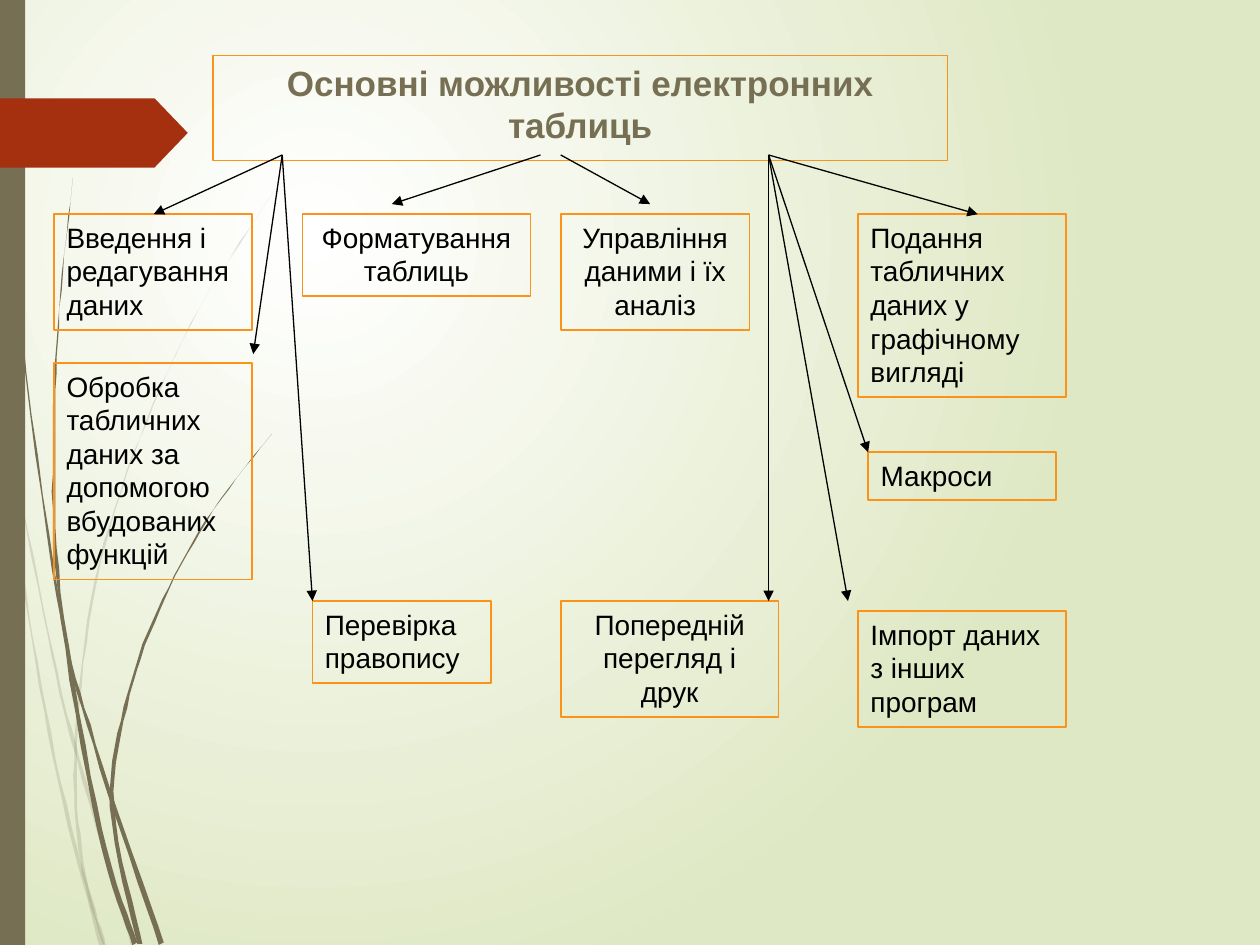
import math
from lxml import etree
from pptx import Presentation, util as u
from pptx.dml.color import RGBColor
from pptx.enum import shapes, text
from pptx.oxml.ns import qn

PX = 9144
SLIDE_W, SLIDE_H = 1000, 750
OLIVE = RGBColor(0x76, 0x6F, 0x54)
RUST = RGBColor(0xA5, 0x30, 0x10)
ORANGE = RGBColor(0xFB, 0x93, 0x18)
BLACK = RGBColor(0, 0, 0)
WHITE = RGBColor(0xFF, 0xFF, 0xFF)
PALE_GREEN = RGBColor(0xDF, 0xE8, 0xC4)
LEFT, CENTER = text.PP_ALIGN.LEFT, text.PP_ALIGN.CENTER

TITLE = "Основні можливості електронних таблиць"
FEATURES = [
    ("Введення і редагування даних", LEFT, 43, 170, 157, 92),
    ("Обробка табличних даних за допомогою вбудованих функцій", LEFT, 43, 288, 157, 172),
    ("Форматування таблиць", CENTER, 240, 170, 181, 65),
    ("Управління даними і їх аналіз", CENTER, 445, 170, 150, 92),
    ("Перевірка правопису", LEFT, 248, 477, 142, 65),
    ("Попередній перегляд і друк", CENTER, 445, 477, 173, 92),
    ("Подання табличних даних у графічному вигляді", LEFT, 681, 170, 165, 145),
    ("Макроси", LEFT, 689, 359, 149, 38),
    ("Імпорт даних з інших програм", LEFT, 681, 485, 165, 92),
]
ARROW_TOP = 123
ARROWS = {
    224: [(201, 281), (122, 170), (248, 477)],
    610: [(673, 477), (776, 170), (689, 359), (610, 477)],
    429: [(311, 162)],
    445: [(516, 162)],
}
FAINT, SOLID = 20, 100
WISPS = [
    (FAINT, 4, [(0, 290), (11, 365), (42, 521), (62, 602), (106, 750)]),
    (FAINT, 4, [(8, 350), (20, 470), (47, 620), (81, 750)]),
    (FAINT, 3, [(217, 153), (158, 245), (111, 348), (76, 461), (60, 590), (65, 683), (83, 750)]),
    (SOLID, 4, [(2, 0), (14, 233), (46, 475), (75, 591), (128, 749)]),
    (SOLID, 5, [(58, 141), (47, 245), (43, 349), (47, 470), (79, 658), (107, 749)]),
    (SOLID, 4, [(216, 344), (169, 405), (130, 475), (102, 551), (89, 640), (111, 749)]),
]


def px(*lengths):
    return [u.Emu(n * PX) for n in lengths]


def smooth(knots, steps=8):
    padded = [knots[0], *knots, knots[-1]]
    for a, b, c, d in zip(padded, padded[1:], padded[2:], padded[3:]):
        for step in range(steps):
            t = step / steps
            yield tuple(q + t * (r - p) / 2 + t * t * (2 * p - 5 * q + 4 * r - s) / 2
                        + t ** 3 * (3 * q - p - 3 * r + s) / 2
                        for p, q, r, s in zip(a, b, c, d))
    yield knots[-1]


def ribbon(knots, width):
    spine = list(smooth(knots))
    last = len(spine) - 1
    near, far = [], []
    for i, (x, y) in enumerate(spine):
        before, after = spine[max(i - 1, 0)], spine[min(i + 1, last)]
        dx, dy = after[0] - before[0], after[1] - before[1]
        reach = width * i / last / 2 / math.hypot(dx, dy)
        near.append((x - dy * reach, y + dx * reach))
        far.append((x + dy * reach, y - dx * reach))
    return near + far[::-1]


def paint(part, color, opacity=SOLID):
    part.shadow.inherit = False
    part.fill.solid()
    part.fill.fore_color.rgb = color
    part.line.fill.background()
    if opacity < SOLID:
        tint = part._element.spPr.find(".//" + qn("a:srgbClr"))
        etree.SubElement(tint, qn("a:alpha"), val=str(opacity * 1000))


def frame(box, words, align, size, color, bold=False):
    box.fill.background()
    box.line.color.rgb = ORANGE
    box.line.width = u.Pt(1)
    body = box.text_frame
    body.word_wrap = True
    body.auto_size = text.MSO_AUTO_SIZE.SHAPE_TO_FIT_TEXT
    body.vertical_anchor = text.MSO_ANCHOR.TOP
    paragraph = body.paragraphs[0]
    paragraph.alignment = align
    run = paragraph.add_run()
    run.text = words
    run.font.name, run.font.size, run.font.bold = "Arial", u.Pt(size), bold
    run.font.color.rgb = color


deck = Presentation()
deck.slide_width, deck.slide_height = px(SLIDE_W, SLIDE_H)
slide = deck.slides.add_slide(deck.slide_layouts[5])
parts = slide.shapes

backdrop = slide.background.fill
backdrop.gradient()
for stop, color in zip(backdrop.gradient_stops, (WHITE, PALE_GREEN)):
    stop.color.rgb = color
linear = slide.element.find(".//" + qn("a:lin"))
radial = etree.Element(qn("a:path"), path="circle")
etree.SubElement(radial, qn("a:fillToRect"), l="50000", t="50000", r="100000", b="100000")
linear.getparent().replace(linear, radial)

for opacity, width, knots in WISPS:
    start, *outline = ribbon(knots, width)
    builder = parts.build_freeform(*start, scale=PX)
    builder.add_line_segments(outline, close=True)
    paint(builder.convert_to_shape(), OLIVE, opacity)

paint(parts.add_shape(shapes.MSO_SHAPE.RECTANGLE, *px(0, 0, 20, SLIDE_H)), OLIVE)
pointer = parts.add_shape(shapes.MSO_SHAPE.PENTAGON, *px(0, 78, 149, 55))
pointer.adjustments[0] = 0.48
paint(pointer, RUST)

heading = parts.title
heading.left, heading.top, heading.width, heading.height = px(169, 44, 583, 78)
frame(heading, TITLE, CENTER, 20, OLIVE, bold=True)

for words, align, *place in FEATURES:
    feature = parts.add_shape(shapes.MSO_SHAPE.RECTANGLE, *px(*place))
    feature.shadow.inherit = False
    frame(feature, words, align, 16, BLACK)

for start, targets in ARROWS.items():
    for target in targets:
        arrow = parts.add_connector(shapes.MSO_CONNECTOR.STRAIGHT, *px(start, ARROW_TOP, *target))
        arrow.line.color.rgb = BLACK
        arrow.line.width = u.Pt(0.75)
        stroke = arrow._element.spPr.find(qn("a:ln"))
        etree.SubElement(stroke, qn("a:tailEnd"), type="triangle")
        etree.SubElement(arrow._element.spPr, qn("a:effectLst"))

deck.save("out.pptx")
